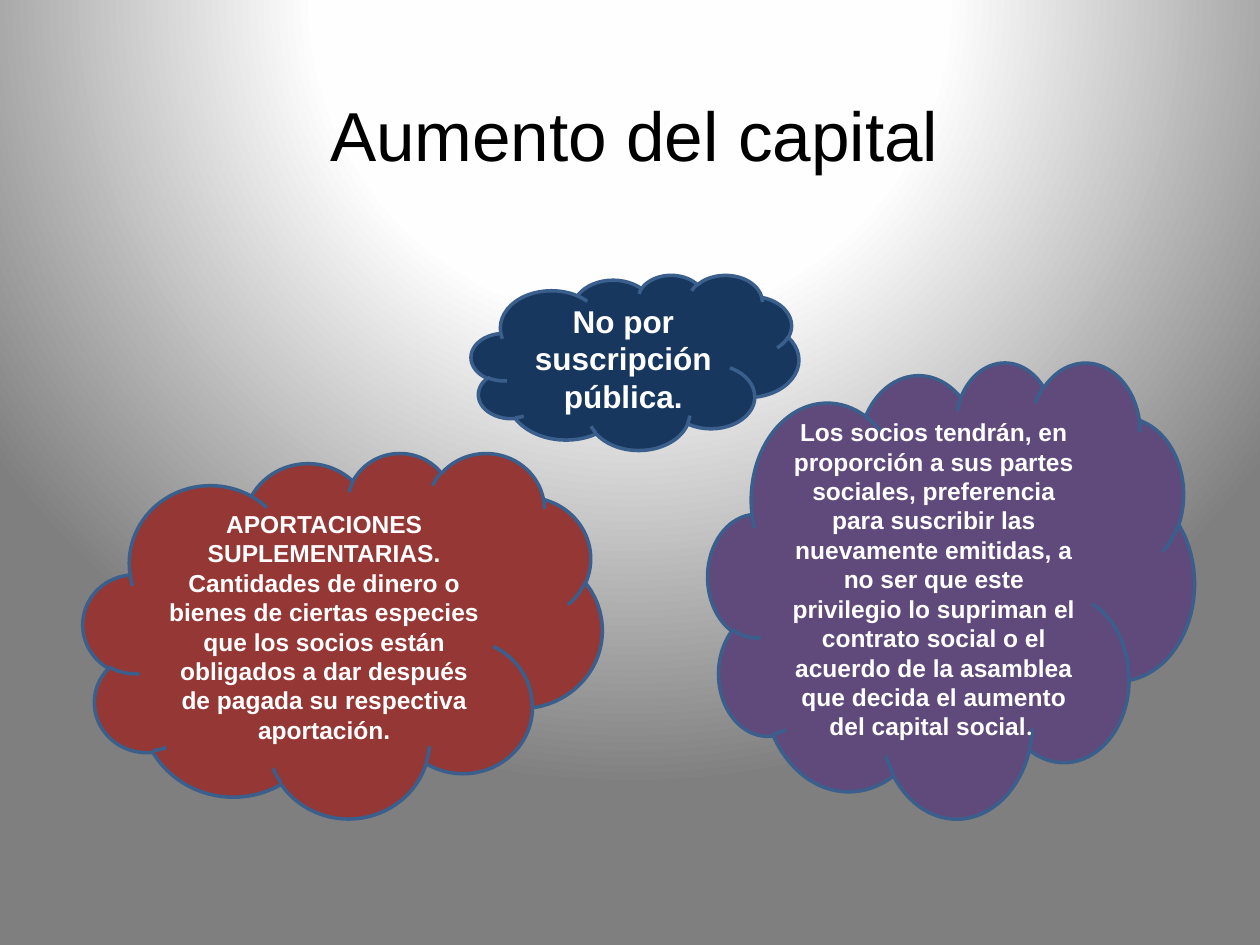
from pptx import Presentation
from pptx.dml.color import RGBColor
from pptx.enum.shapes import MSO_SHAPE
from pptx.enum.text import MSO_ANCHOR, MSO_AUTO_SIZE, PP_ALIGN
from pptx.oxml import parse_xml
from pptx.oxml.ns import nsdecls
from pptx.util import Pt

CLOUD = MSO_SHAPE.CLOUD
MID = MSO_ANCHOR.MIDDLE
CENTER = PP_ALIGN.CENTER
NO_FIT = MSO_AUTO_SIZE.NONE

# Content: text, box (left, top, width, height), fill, type size
TITLE = "Aumento del capital"
TITLE_BOX = (155.5, 54.7, 414, 43.2)
CLOUDS = [
    ([("No por suscripción pública.", "Arial")],
     (269.3, 157, 187.2, 100.1), "blue", "large"),
    ([("Los socios tendrán, en proporción a sus partes sociales, preferencia "
       "para suscribir las nuevamente emitidas, a no ser que este privilegio "
       "lo supriman el contrato social o el acuerdo de la asamblea que decida "
       "el aumento del capital social", "Arial"), (". ", "Calibri")],
     (404.6, 206.6, 277.9, 260.6), "purple", "small"),
    ([("APORTACIONES SUPLEMENTARIAS. Cantidades de dinero o bienes de ciertas "
       "especies que los socios están obligados a dar después de pagada su "
       "respectiva aportación.", "Arial")],
     (47.5, 258.5, 296.6, 208.8), "red", "small"),
]

THEME = {
    "font": "Arial",
    "title": 39.6, "large": 18, "small": 14, "line": 2,
    "black": "000000", "white": "FFFFFF", "edge": "3A5F8C",
    "blue": "17375E", "purple": "604A7B", "red": "953735",
    "stops": [(0, "FFFFFF"), (40, "FEFEFE"), (100, "7F7F7F")],
}


def color(name):
    return RGBColor.from_string(THEME[name])


def style(font, size, ink, bold=False):
    font.name = THEME["font"]
    font.size = Pt(THEME[size])
    font.bold = bold
    font.color.rgb = color(ink)


def set_back(slide):
    """Radial glow centred above the slide."""
    stops = "".join(
        f'<a:gs pos="{pos * 1000}"><a:srgbClr val="{rgb}"/></a:gs>'
        for pos, rgb in THEME["stops"])
    slide.element.cSld.insert(0, parse_xml(
        f'<p:bg {nsdecls("p", "a")}><p:bgPr><a:gradFill rotWithShape="1">'
        f'<a:gsLst>{stops}</a:gsLst><a:path path="circle">'
        '<a:fillToRect l="50000" t="-80000" r="50000" b="180000"/></a:path>'
        '</a:gradFill><a:effectLst/></p:bgPr></p:bg>'))


def set_title(slide):
    title = slide.shapes.title
    title.left, title.top, title.width, title.height = map(Pt, TITLE_BOX)
    frame = title.text_frame
    frame.text = TITLE
    frame.auto_size = NO_FIT
    frame.vertical_anchor = MID
    para = frame.paragraphs[0]
    para.alignment = CENTER
    style(para.font, "title", "black")


def add_cloud(slide, runs, box, fill, size):
    cloud = slide.shapes.add_shape(CLOUD, *map(Pt, box))
    cloud.shadow.inherit = False
    cloud.fill.solid()
    cloud.fill.fore_color.rgb = color(fill)
    cloud.line.color.rgb = color("edge")
    cloud.line.width = Pt(THEME["line"])
    frame = cloud.text_frame
    frame.word_wrap = True
    frame.vertical_anchor = MID
    para = frame.paragraphs[0]
    para.alignment = CENTER
    style(para.font, size, "white", bold=True)
    for text, face in runs:
        run = para.add_run()
        run.text = text
        if face != THEME["font"]:
            run.font.name = face


def main():
    deck = Presentation()
    deck.slide_width, deck.slide_height = Pt(720), Pt(540)
    slide = deck.slides.add_slide(deck.slide_layouts[5])
    set_back(slide)
    set_title(slide)
    for cloud in CLOUDS:
        add_cloud(slide, *cloud)
    deck.save("out.pptx")


if __name__ == "__main__":
    main()
